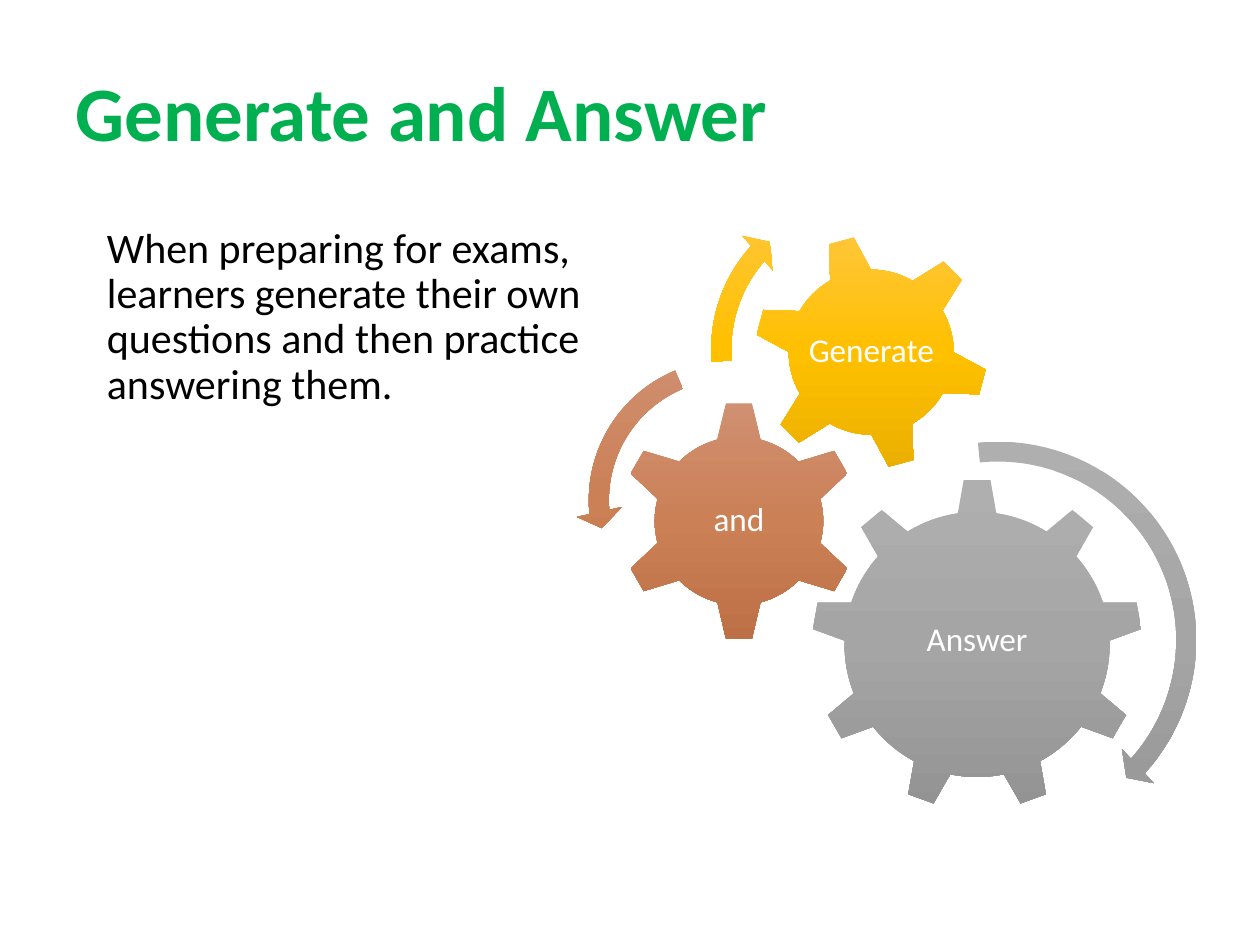
from copy import deepcopy

from pptx import Presentation
from pptx.dml.color import RGBColor
from pptx.enum import shapes, text
from pptx.util import Inches, Pt

GRAY = ("AFAFAF", "A5A5A5", "939393")
ORANGE = ("D09072", "CB8056", "BD6F45")
GOLD = ("FFC746", "FFC000", "E5AC00")
SHAPE = shapes.MSO_SHAPE


def color(value):
    """Turn a hex string into a colour."""
    return RGBColor.from_string(value)


def add_text(slide, box, content, size, ink, bold=False, inset=(0.1, 0.05),
             anchor=text.MSO_ANCHOR.MIDDLE, align=text.PP_ALIGN.LEFT):
    """Add a one-paragraph text box and return its paragraph."""
    frame = slide.shapes.add_textbox(*map(Inches, box)).text_frame
    frame.word_wrap = True
    frame.vertical_anchor = anchor
    frame.margin_left = frame.margin_right = Inches(inset[0])
    frame.margin_top = frame.margin_bottom = Inches(inset[1])
    paragraph = frame.paragraphs[0]
    paragraph.alignment = align
    paragraph.line_spacing = 0.9
    run = paragraph.add_run()
    run.text = content
    run.font.name = "Calibri"
    run.font.size = Pt(size)
    run.font.bold = bold
    run.font.color.rgb = color(ink)
    return paragraph


def add_gradient_shape(slide, kind, left, top, size, shades, adjustments=()):
    """Add a square preset shape with an upright three-stop gradient."""
    shape = slide.shapes.add_shape(kind, *map(Inches, (left, top, size, size)))
    shape.shadow.inherit = False
    shape.line.fill.background()
    for index, value in enumerate(adjustments):
        shape.adjustments[index] = value
    shape.fill.gradient()
    shape.fill.gradient_angle = 270
    gradient = shape._element.spPr.find("{*}gradFill")
    gradient.set("rotWithShape", "0")
    first_stop = gradient.find(".//{*}gs")
    first_stop.addnext(deepcopy(first_stop))
    for stop, shade, position in zip(shape.fill.gradient_stops, shades, (0, 0.5, 1)):
        stop.color.rgb = color(shade)
        stop.position = position
    return shape


def add_gear(slide, kind, box, shades, label, label_box, rotation=0):
    """Add a gear with its centred label."""
    gear = add_gradient_shape(slide, kind, *box, shades)
    gear.rotation = rotation
    add_text(slide, label_box, label, 19, "FFFFFF", inset=(0, 0.03),
             align=text.PP_ALIGN.CENTER)


def add_title(slide, box):
    """Add the slide title."""
    add_text(slide, box, "Generate and Answer", 44, "00B050", bold=True)


def add_body(slide, box):
    """Add the indented explanation."""
    paragraph = add_text(
        slide, box,
        "When preparing for exams, learners generate their own questions "
        "and then practice answering them.",
        24, "000000", anchor=text.MSO_ANCHOR.TOP)
    paragraph.space_before = Pt(10)
    paragraph._p.get_or_add_pPr().set("marL", str(Inches(0.25)))


def add_gears(slide, left, top):
    """Add the three gears and their turning arrows from a top-left corner."""
    gears = (
        (SHAPE.GEAR_9, (1.87, 2.35, 2.63), GRAY, "Answer", (2.4, 2.96, 1.57, 1.35), 0),
        (SHAPE.GEAR_6, (0.34, 1.73, 1.91), ORANGE, "and", (0.82, 2.21, 0.95, 0.94), 0),
        (SHAPE.GEAR_6, (1.41, 0.41, 1.87), GOLD, "Generate", (1.82, 0.82, 1.05, 1.05), 345),
    )
    for kind, (x, y, size), shades, label, (label_x, label_y, *extent), rotation in gears:
        add_gear(slide, kind, (left + x, top + y, size), shades, label,
                 (left + label_x, top + label_y, *extent), rotation)
    arrows = (
        (SHAPE.CIRCULAR_ARROW, 1.67, 1.95, 3.36, GRAY,
         (0.047, 2.99, 25.2, 158.53, 0.055)),
        (SHAPE.LEFT_CIRCULAR_ARROW, 0, 1.3, 2.44, ORANGE,
         (0.065, 4.3, 104.89, 148.38, 0.075)),
        (SHAPE.CIRCULAR_ARROW, 0.97, 0, 2.64, GOLD,
         (0.06, 3.94, 133.14, 105.08, 0.07)),
    )
    for kind, x, y, size, shades, adjustments in arrows:
        add_gradient_shape(slide, kind, left + x, top + y, size, shades, adjustments)


def main():
    """Build and save the slide."""
    presentation = Presentation()
    presentation.slide_width = Inches(10)
    presentation.slide_height = Inches(7.5)
    slide = presentation.slides.add_slide(presentation.slide_layouts[6])
    add_title(slide, (0.5, 0.3, 9, 1.25))
    add_body(slide, (0.5, 1.75, 4.42, 4.95))
    add_gears(slide, 4.57, 1.45)
    presentation.save("out.pptx")


if __name__ == "__main__":
    main()
